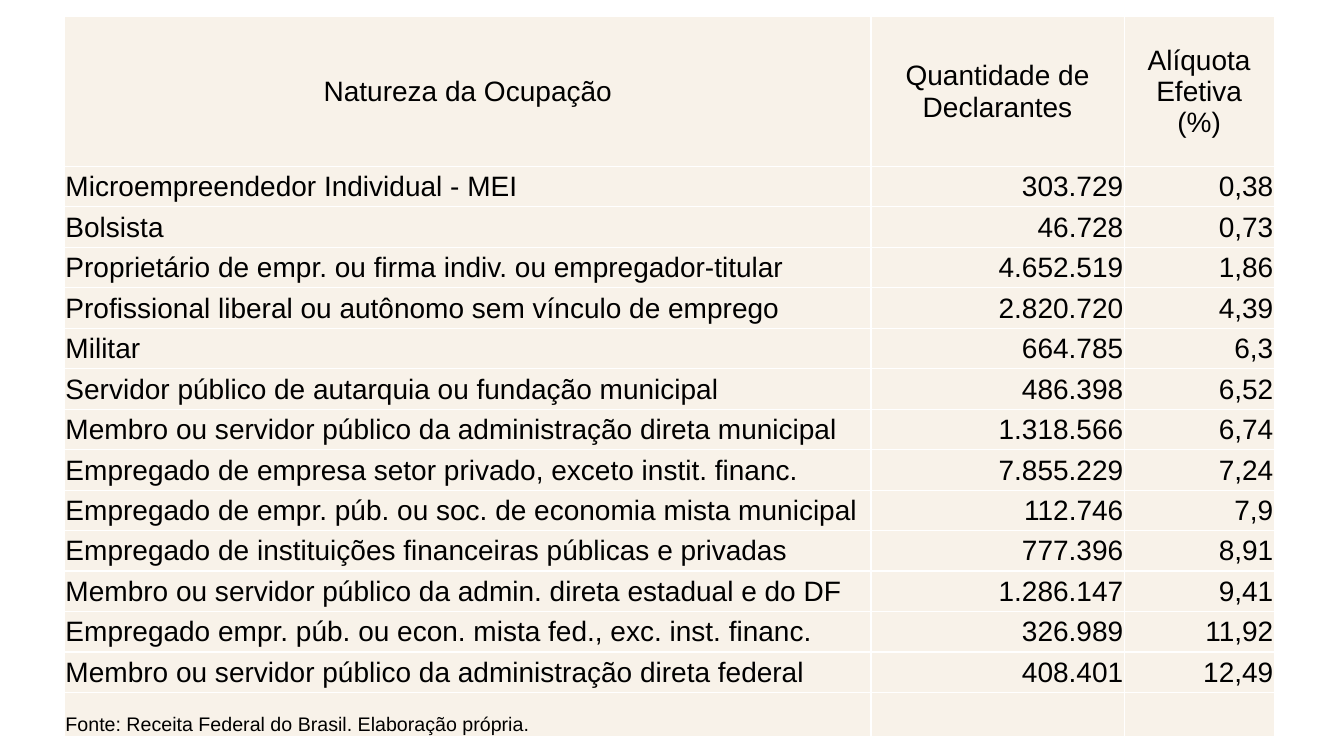
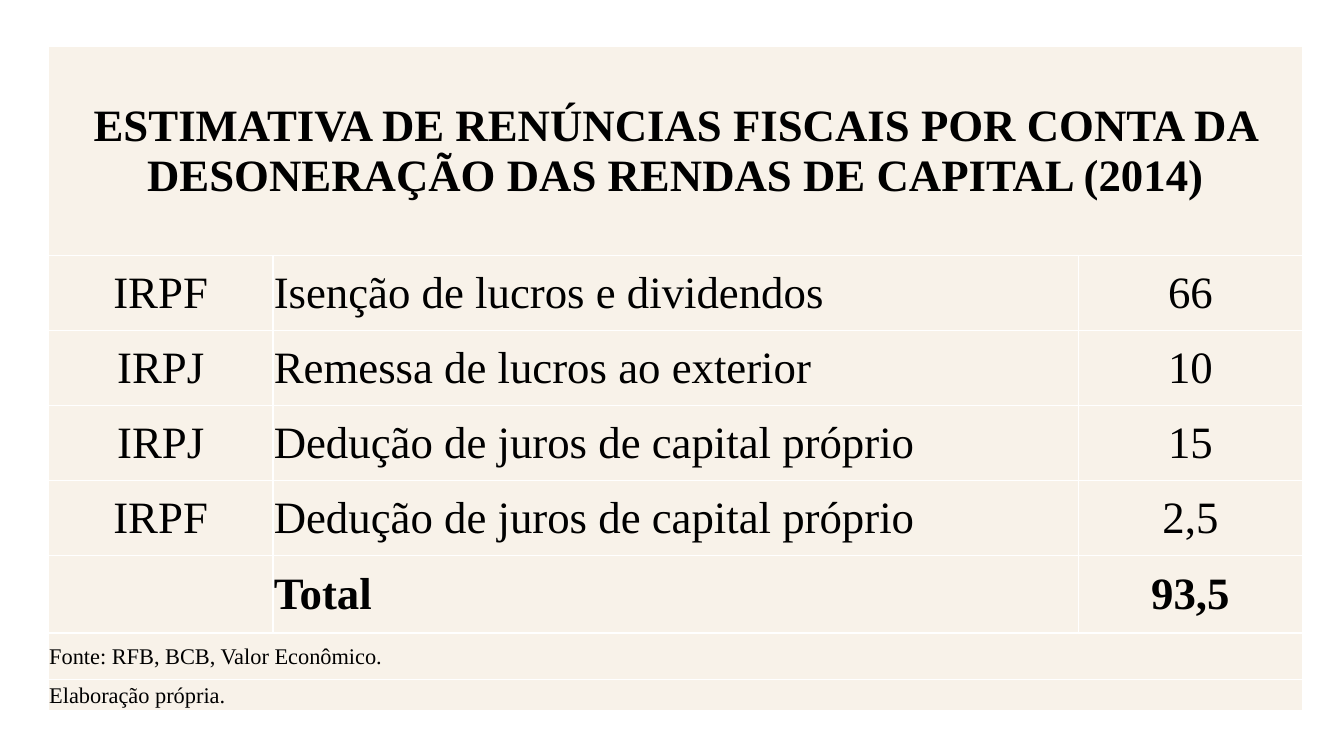
from dataclasses import dataclass

from lxml.etree import SubElement
from pptx import Presentation
from pptx.dml.color import RGBColor
from pptx.enum.text import MSO_ANCHOR, PP_ALIGN
from pptx.oxml.ns import qn
from pptx.presentation import Presentation as Deck
from pptx.table import _Cell
from pptx.util import Cm, Pt

COLORS = {"text": "000000", "cell": "F8F2E9", "border": "FFFFFF"}
LEFT, CENTER, RIGHT = PP_ALIGN.LEFT, PP_ALIGN.CENTER, PP_ALIGN.RIGHT
CELL_FORMAT = {
    "margin_left": Cm(0.02),
    "margin_right": Cm(0.02),
    "margin_top": Cm(0.02),
    "margin_bottom": Cm(0),
}


@dataclass(frozen=True)
class Row:
    texts: tuple[str, ...]
    height: float
    size: int
    aligns: tuple[PP_ALIGN, ...]
    bold: bool = False
    anchor: MSO_ANCHOR = MSO_ANCHOR.MIDDLE
    merged: bool = False


@dataclass(frozen=True)
class TableSlide:
    left: float
    top: float
    widths: tuple[float, ...]
    font: str
    rows: list[Row]


def add_borders(cell: _Cell) -> None:
    tcPr = cell._tc.get_or_add_tcPr()
    for side in ("lnL", "lnR", "lnT", "lnB"):
        ln = SubElement(tcPr, qn(f"a:{side}"), w=str(Pt(1)))
        fill = SubElement(ln, qn("a:solidFill"))
        SubElement(fill, qn("a:srgbClr"), val=COLORS["border"])


def format_cell(cell: _Cell, row: Row) -> None:
    add_borders(cell)
    cell.fill.solid()
    cell.fill.fore_color.rgb = RGBColor.from_string(COLORS["cell"])
    for name, value in {**CELL_FORMAT, "vertical_anchor": row.anchor}.items():
        setattr(cell, name, value)


def write_cell(cell: _Cell, text: str, row: Row, align: PP_ALIGN, font: str) -> None:
    p = cell.text_frame.paragraphs[0]
    p.text = text
    p.alignment = align
    font_format = {"name": font, "size": Pt(row.size), "bold": row.bold}
    for r in p.runs:
        for name, value in font_format.items():
            setattr(r.font, name, value)
        r.font.color.rgb = RGBColor.from_string(COLORS["text"])


def add_table_slide(prs: Deck, content: TableSlide) -> None:
    s = prs.slides.add_slide(prs.slide_layouts[6])
    frame = s.shapes.add_table(
        len(content.rows), len(content.widths),
        Cm(content.left), Cm(content.top),
        Cm(sum(content.widths)), Cm(sum(row.height for row in content.rows)),
    )
    table = frame.table
    table.first_row = table.horz_banding = False
    for column, width in zip(table.columns, content.widths):
        column.width = Cm(width)
    for i, row in enumerate(content.rows):
        table.rows[i].height = Cm(row.height)
        cells = list(table.rows[i].cells)
        for cell in cells:
            format_cell(cell, row)
        if row.merged:
            cells[0].merge(cells[-1])
        for cell, text, align in zip(cells, row.texts, row.aligns):
            if text:
                write_cell(cell, text, row, align, content.font)


OCCUPATIONS = [
    ("Microempreendedor Individual - MEI", "303.729", "0,38"),
    ("Bolsista", "46.728", "0,73"),
    ("Proprietário de empr. ou firma indiv. ou empregador-titular", "4.652.519", "1,86"),
    ("Profissional liberal ou autônomo sem vínculo de emprego", "2.820.720", "4,39"),
    ("Militar", "664.785", "6,3"),
    ("Servidor público de autarquia ou fundação municipal", "486.398", "6,52"),
    ("Membro ou servidor público da administração direta municipal", "1.318.566", "6,74"),
    ("Empregado de empresa setor privado, exceto instit. financ.", "7.855.229", "7,24"),
    ("Empregado de empr. púb. ou soc. de economia mista municipal", "112.746", "7,9"),
    ("Empregado de instituições financeiras públicas e privadas", "777.396", "8,91"),
    ("Membro ou servidor público da admin. direta estadual e do DF", "1.286.147", "9,41"),
    ("Empregado empr. púb. ou econ. mista fed., exc. inst. financ.", "326.989", "11,92"),
    ("Membro ou servidor público da administração direta federal", "408.401", "12,49"),
]
WAIVERS = [
    ("IRPF", "Isenção de lucros e dividendos", "66"),
    ("IRPJ", "Remessa de lucros ao exterior", "10"),
    ("IRPJ", "Dedução de juros de capital próprio", "15"),
    ("IRPF", "Dedução de juros de capital próprio", "2,5"),
]
OCCUPATION_HEADER = ("Natureza da Ocupação", "Quantidade de Declarantes", "Alíquota Efetiva\v(%)")
OCCUPATION_SOURCE = "Fonte: Receita Federal do Brasil. Elaboração própria."
WAIVER_TITLE = (
    "ESTIMATIVA DE RENÚNCIAS FISCAIS POR CONTA DA "
    "DESONERAÇÃO DAS RENDAS DE CAPITAL (2014)"
)
OCCUPATION_ALIGNS = (LEFT, RIGHT, RIGHT)
WAIVER_ALIGNS = (CENTER, LEFT, CENTER)

SLIDES = [
    TableSlide(1.63, 0.41, (20.32, 6.38, 3.78), "Arial", [
        Row(OCCUPATION_HEADER, 3.78, 20, (CENTER,) * 3),
        *(Row(texts, 1.02, 20, OCCUPATION_ALIGNS) for texts in OCCUPATIONS),
        Row((OCCUPATION_SOURCE,), 1.1, 14, (LEFT,), anchor=MSO_ANCHOR.BOTTOM),
    ]),
    TableSlide(1.22, 1.17, (5.66, 20.29, 5.66), "Times New Roman", [
        Row((WAIVER_TITLE,), 5.26, 32, (CENTER,), bold=True, merged=True),
        *(Row(texts, 1.89, 32, WAIVER_ALIGNS) for texts in WAIVERS),
        Row(("", "Total", "93,5"), 1.96, 32, WAIVER_ALIGNS, bold=True),
        Row(("Fonte: RFB, BCB, Valor Econômico.",), 1.18, 16, (LEFT,), merged=True),
        Row(("Elaboração própria.",), 0.78, 16, (LEFT,), merged=True),
    ]),
]


def main() -> None:
    prs = Presentation()
    prs.slide_width, prs.slide_height = Cm(33.87), Cm(19.05)
    for content in SLIDES:
        add_table_slide(prs, content)
    prs.save("out.pptx")


if __name__ == "__main__":
    main()
